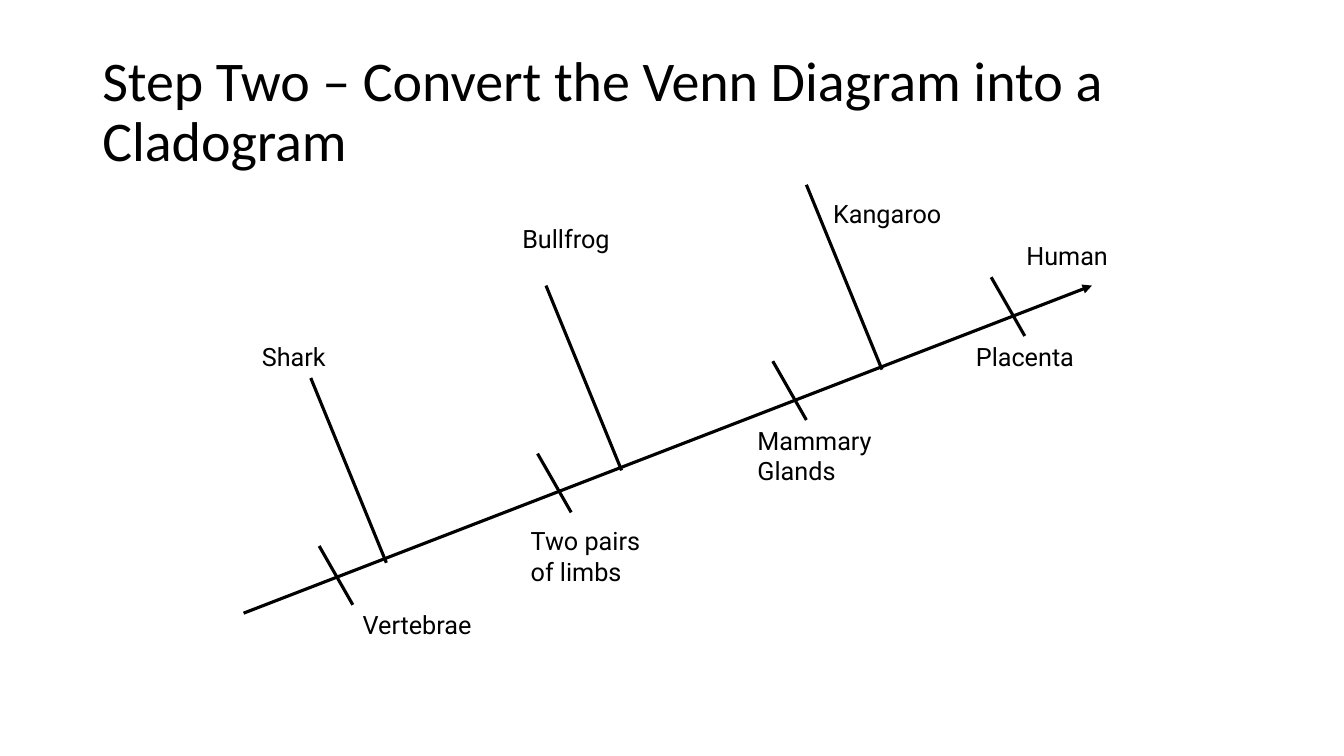
from lxml import etree
from pptx import Presentation
from pptx import util as u
from pptx.dml import color
from pptx.enum import shapes, text
from pptx.oxml import ns

COLUMNS, ROWS = 160, 90
CELL = u.Inches(1) // 12
BLACK = "000000"
TICK = (4, 7)
BRANCH = (-9, -22)
LINE_HEIGHT = 3.6

TICK_STARTS = [(38, 65), (118, 33), (92, 43), (64, 54)]
BRANCH_STARTS = [(46, 67), (74, 56), (105, 44)]
LABELS = [
    ("Vertebrae", 42, 72, 23, 1),
    ("Shark", 30, 40, 17, 1),
    ("Two pairs of limbs", 62, 62, 17, 2),
    ("Bullfrog", 61, 26, 17, 1),
    ("Mammary Glands", 89, 50, 17, 2),
    ("Kangaroo", 98, 23, 17, 1),
    ("Placenta", 115, 40, 17, 1),
    ("Human", 121, 28, 16, 1),
]


def rgb(value):
    return color.RGBColor.from_string(value)


def cells(*counts):
    return [round(count * CELL) for count in counts]


def add_line(group, start, step, arrow=False):
    end = (start[0] + step[0], start[1] + step[1])
    line = group.shapes.add_connector(
        shapes.MSO_CONNECTOR.STRAIGHT, *cells(*start, *end))
    line.line.color.rgb = rgb(BLACK)
    line.line.width = u.Pt(2.25)
    properties = line._element.spPr
    if arrow:
        outline = properties.find(ns.qn("a:ln"))
        etree.SubElement(outline, ns.qn("a:tailEnd"), type="triangle")
    etree.SubElement(properties, ns.qn("a:effectLst"))


def add_text(page, words, area, font, size):
    box = page.shapes.add_textbox(*cells(*area))
    box.text_frame.word_wrap = True
    para = box.text_frame.paragraphs[0]
    span = para.add_run()
    span.text = words
    span.font.name = font
    span.font.size = u.Pt(size)
    span.font.color.rgb = rgb(BLACK)
    return box.text_frame


def add_title(page, words):
    frame = add_text(page, words, (11, 4.8, 138, 17.4), "Calibri", 40)
    frame.vertical_anchor = text.MSO_ANCHOR.MIDDLE
    frame.paragraphs[0].line_spacing = 0.9


def add_label(page, words, left, top, width, lines):
    height = 1.2 + lines * LINE_HEIGHT
    frame = add_text(page, words, (left, top, width, height), "Roboto", 18)
    frame.auto_size = text.MSO_AUTO_SIZE.SHAPE_TO_FIT_TEXT


def add_cladogram(page):
    group = page.shapes.add_group_shape()
    add_line(group, (29, 73), (101, -39), arrow=True)
    for start in TICK_STARTS:
        add_line(group, start, TICK)
    for start in BRANCH_STARTS:
        add_line(group, start, BRANCH)


def main():
    deck = Presentation()
    deck.slide_width, deck.slide_height = cells(COLUMNS, ROWS)
    page = deck.slides.add_slide(deck.slide_layouts[6])
    add_title(page, "Step Two – Convert the Venn Diagram into a Cladogram")
    add_cladogram(page)
    for label in LABELS:
        add_label(page, *label)
    deck.save("out.pptx")


if __name__ == "__main__":
    main()
